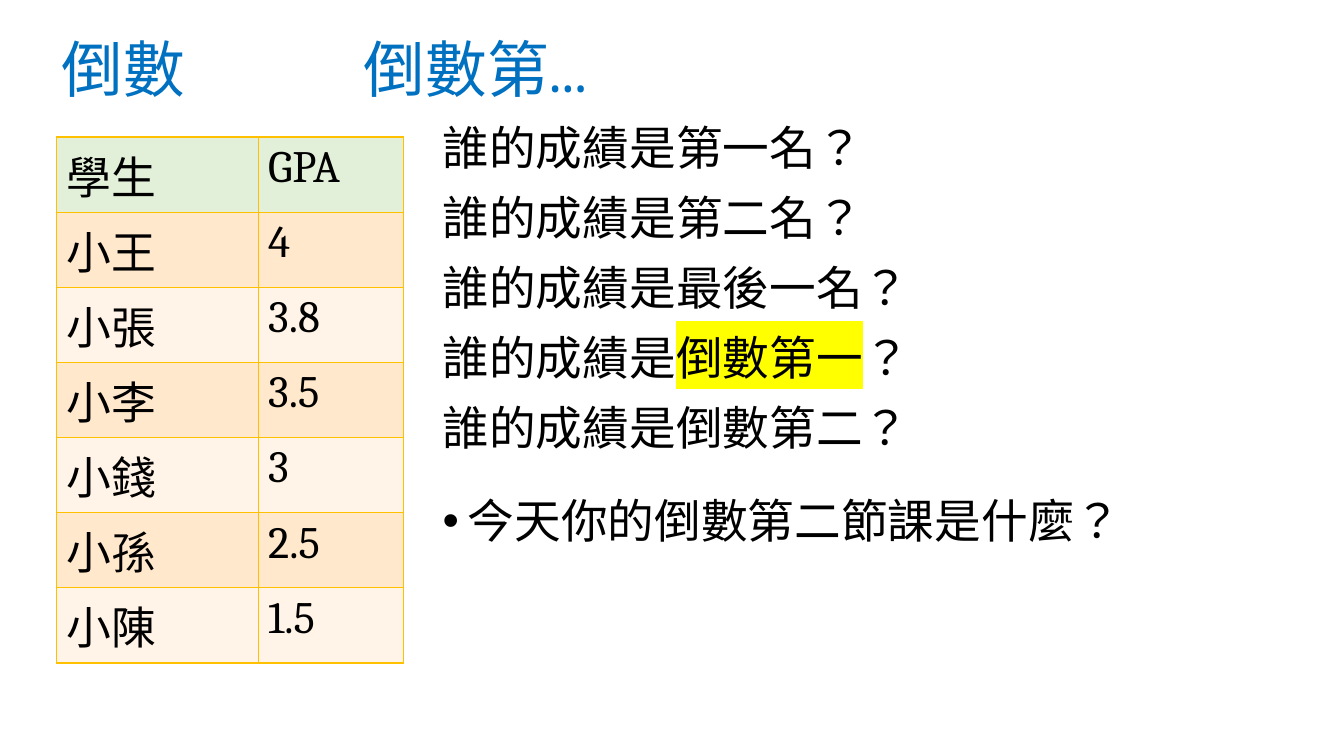
from typing import NamedTuple

import pptx
import pptx.dml.color
import pptx.enum.lang
import pptx.enum.text
import pptx.oxml
import pptx.oxml.ns
import pptx.util
from pptx.util import Inches, Pt

RGBColor = pptx.dml.color.RGBColor
TITLE_BLUE = RGBColor(0x00, 0x70, 0xC0)
BLACK = RGBColor(0x00, 0x00, 0x00)
HIGHLIGHT_YELLOW = RGBColor(0xFF, 0xFF, 0x00)
BORDER_GOLD = RGBColor(0xFF, 0xC0, 0x00)
HEADER_GREEN = RGBColor(0xE2, 0xF0, 0xD9)
BAND_ORANGE = RGBColor(0xFF, 0xE8, 0xCC)
BAND_CREAM = RGBColor(0xFF, 0xF4, 0xE7)
FONT_NAME = "Cambria"
NAMESPACE = pptx.oxml.ns.nsdecls("a")


class Grade(NamedTuple):
    student: str
    gpa: str


class Question(NamedTuple):
    text: str
    marked: str = ""
    ending: str = ""
    space_before: float = 14
    bulleted: bool = False


GRADES = [
    Grade("學生", "GPA"),
    Grade("小王", "4"),
    Grade("小張", "3.8"),
    Grade("小李", "3.5"),
    Grade("小錢", "3"),
    Grade("小孫", "2.5"),
    Grade("小陳", "1.5"),
]
QUESTIONS = [
    Question("誰的成績是第一名？"),
    Question("誰的成績是第二名？"),
    Question("誰的成績是最後一名？"),
    Question("誰的成績是", "倒數第一", "？"),
    Question("誰的成績是倒數第二？"),
    Question("今天你的倒數第二節課是什麼？", space_before=30.4, bulleted=True),
]


def place(shape, left: float, top: float, width: float, height: float) -> None:
    shape.left, shape.top = Inches(left), Inches(top)
    shape.width, shape.height = Inches(width), Inches(height)


def set_font(paragraph, size: float, color: RGBColor) -> None:
    paragraph.font.name = FONT_NAME
    paragraph.font.size = Pt(size)
    paragraph.font.color.rgb = color


def add_run(paragraph, text: str):
    """Append a run marked as Traditional Chinese, which selects its glyphs."""
    run = paragraph.add_run()
    run.text = text
    run.font.language_id = pptx.enum.lang.MSO_LANGUAGE_ID.TRADITIONAL_CHINESE
    return run


def highlight(run, color: RGBColor) -> None:
    run.font._element.append(pptx.oxml.parse_xml(
        f'<a:highlight {NAMESPACE}><a:srgbClr val="{color}"/></a:highlight>'))


def set_bullet(paragraph, bulleted: bool) -> None:
    """Give the paragraph a hanging bullet, or neither bullet nor indent."""
    indent = Inches(0.25) if bulleted else 0
    properties = paragraph._p.get_or_add_pPr()
    properties.set("marL", str(indent))
    properties.set("indent", str(-indent))
    bullet = '<a:buChar {} char="•"/>' if bulleted else "<a:buNone {}/>"
    properties.append(pptx.oxml.parse_xml(bullet.format(NAMESPACE)))


def add_tab_stops(paragraph, *positions: float) -> None:
    stops = "".join(f'<a:tab pos="{Inches(position)}" algn="l"/>'
                    for position in positions)
    paragraph._p.get_or_add_pPr().append(pptx.oxml.parse_xml(
        f"<a:tabLst {NAMESPACE}>{stops}</a:tabLst>"))


def add_borders(cell, color: RGBColor) -> None:
    properties = cell._tc.get_or_add_tcPr()
    for position, side in enumerate(("lnL", "lnR", "lnT", "lnB")):
        properties.insert(position, pptx.oxml.parse_xml(
            f'<a:{side} {NAMESPACE} w="{Pt(1)}"><a:solidFill>'
            f'<a:srgbClr val="{color}"/></a:solidFill></a:{side}>'))


def fill_title(title) -> None:
    place(title, 0.51, 0.23, 11.5, 0.97)
    title.text_frame.auto_size = pptx.enum.text.MSO_AUTO_SIZE.NONE
    title.text_frame.vertical_anchor = pptx.enum.text.MSO_ANCHOR.MIDDLE
    heading = title.text_frame.paragraphs[0]
    add_run(heading, "倒數 \t\t倒數第...")
    heading.alignment = pptx.enum.text.PP_ALIGN.LEFT
    heading.line_spacing = 0.9
    add_tab_stops(heading, 2, 3)
    set_font(heading, 44, TITLE_BLUE)


def fill_questions(body) -> None:
    place(body, 4.29, 1.19, 7.98, 5.55)
    frame = body.text_frame
    frame.auto_size = pptx.enum.text.MSO_AUTO_SIZE.NONE
    for index, question in enumerate(QUESTIONS):
        paragraph = frame.add_paragraph() if index else frame.paragraphs[0]
        paragraph.line_spacing = 0.9
        paragraph.space_before = Pt(question.space_before)
        set_bullet(paragraph, question.bulleted)
        set_font(paragraph, 33.3, BLACK)
        add_run(paragraph, question.text)
        if question.marked:
            highlight(add_run(paragraph, question.marked), HIGHLIGHT_YELLOW)
            add_run(paragraph, question.ending)


def add_grade_table(slide) -> None:
    row_height = Inches(0.74)
    table = slide.shapes.add_table(
        len(GRADES), 2, Inches(0.56), Inches(1.36), Inches(3.44),
        row_height * len(GRADES)).table
    table.columns[0].width = Inches(2)
    table.columns[1].width = Inches(1.44)
    for row, grade in enumerate(GRADES):
        band = BAND_ORANGE if row % 2 else BAND_CREAM
        for column, text in enumerate(grade):
            cell = table.cell(row, column)
            cell.fill.solid()
            cell.fill.fore_color.rgb = band if row else HEADER_GREEN
            add_borders(cell, BORDER_GOLD)
            paragraph = cell.text_frame.paragraphs[0]
            add_run(paragraph, text)
            set_font(paragraph, 32, BLACK)
            paragraph.font.bold = False


def main() -> None:
    presentation = pptx.Presentation()
    presentation.slide_width = Inches(13.33)
    presentation.slide_height = Inches(7.5)
    slide = presentation.slides.add_slide(presentation.slide_layouts[1])
    fill_title(slide.shapes.title)
    fill_questions(slide.placeholders[1])
    add_grade_table(slide)
    presentation.save("out.pptx")


if __name__ == "__main__":
    main()
